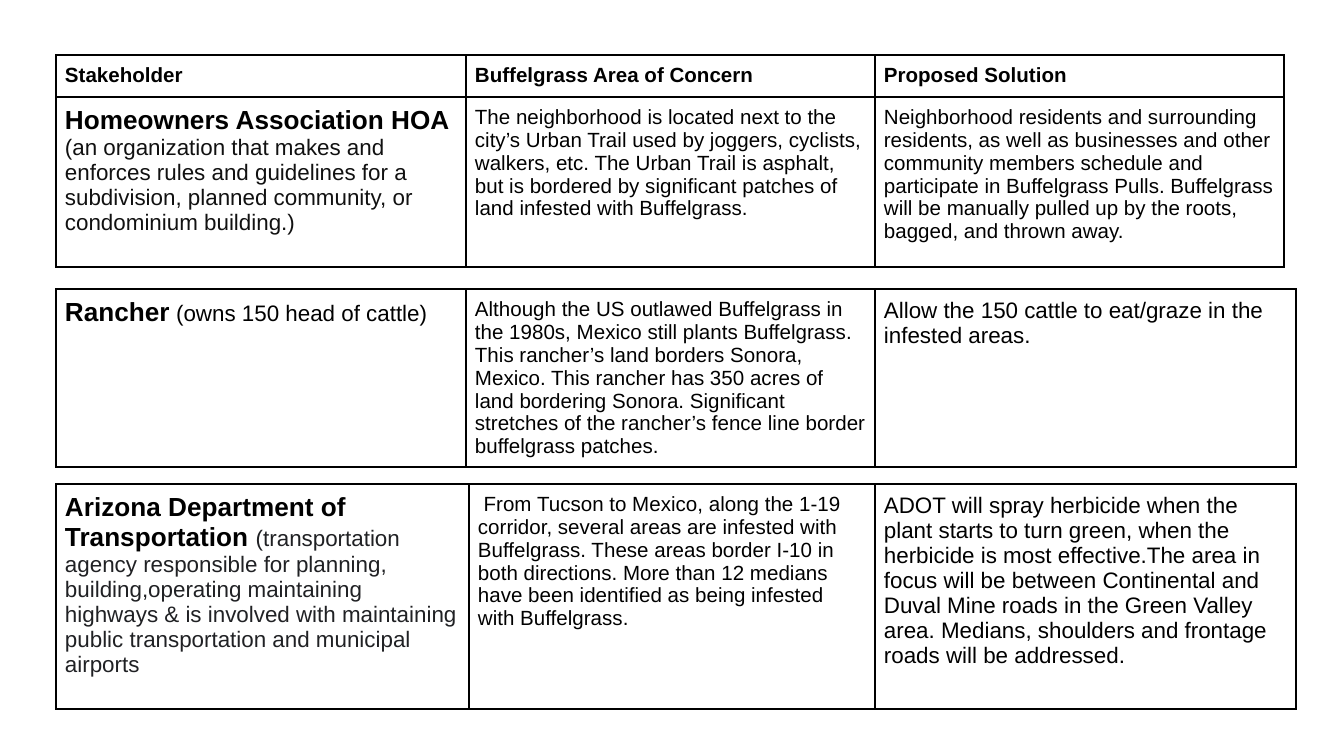
from lxml.etree import SubElement
from pptx import Presentation
from pptx.dml.color import RGBColor
from pptx.oxml.ns import qn
from pptx.util import Pt

PX = 914400 / 134.4
SLIDE_SIZE = (1344, 756)
LEFT, INSET = 56, 9
FONT = "Arial"
COLORS = {"black": "000000", "charcoal": "111111", "gray": "202124", "white": "FFFFFF"}

HEADING = {"size": 11, "bold": True}
NAME = {"size": 14, "bold": True}
DETAIL = {"size": 11}
LARGE = {"size": 12}

TABLES = [
    {
        "top": 55, "columns": [410, 409, 409], "heights": [42, 170],
        "rows": [
            [
                [("Stakeholder", HEADING)],
                [("Buffelgrass Area of Concern", HEADING)],
                [("Proposed Solution", HEADING)],
            ],
            [
                [
                    ("Homeowners Association HOA", NAME),
                    (" ", DETAIL),
                    ("(an organization that makes and enforces rules and guidelines for a "
                     "subdivision, planned community, or condominium building.)",
                     {"size": 12, "color": "charcoal"}),
                ],
                [("The neighborhood is located next to the city’s Urban Trail used by joggers, "
                  "cyclists, walkers, etc. The Urban Trail is asphalt, but is bordered by "
                  "significant patches of land infested with Buffelgrass.", DETAIL)],
                [("Neighborhood residents and surrounding residents, as well as businesses and "
                  "other community members schedule and participate in Buffelgrass Pulls. "
                  "Buffelgrass will be manually pulled up by the roots, bagged, and thrown away.",
                  DETAIL)],
            ],
        ],
    },
    {
        "top": 289, "columns": [410, 409, 421], "heights": [178],
        "rows": [[
            [
                ("Rancher", NAME),
                (" ", {"size": 12, "bold": True}),
                ("(owns 150 head of cattle)", LARGE),
            ],
            [("Although the US outlawed Buffelgrass in the 1980s, Mexico still plants "
              "Buffelgrass. This rancher’s land borders Sonora, Mexico. This rancher has 350 "
              "acres of land bordering Sonora. Significant stretches of the rancher’s fence "
              "line border buffelgrass patches.", DETAIL)],
            [("Allow the 150 cattle to eat/graze in the infested areas.", LARGE)],
        ]],
    },
    {
        "top": 484, "columns": [413, 406, 421], "heights": [225],
        "rows": [[
            [
                ("Arizona Department of Transportation ", NAME),
                ("(transportation agency responsible for planning, building,operating "
                 "maintaining highways & is involved with maintaining public transportation "
                 "and municipal airports", {"size": 12, "color": "gray"}),
            ],
            [(" From Tucson to Mexico, along the 1-19 corridor, several areas are infested with "
              "Buffelgrass. These areas border I-10 in both directions. More than 12 medians "
              "have been identified as being infested with Buffelgrass.", DETAIL)],
            [("ADOT will spray herbicide when the plant starts to turn green, when the "
              "herbicide is most effective.The area in focus will be between Continental and "
              "Duval Mine roads in the Green Valley area. Medians, shoulders and frontage "
              "roads will be addressed.", LARGE)],
        ]],
    },
]


def px(length):
    return round(length * PX)


def add_text(paragraph, text, size, bold=False, color="black"):
    run = paragraph.add_run()
    run.text = text
    run.font.name = FONT
    run.font.size = Pt(size)
    run.font.bold = bold
    run.font.color.rgb = RGBColor.from_string(COLORS[color])


def style_cell(cell):
    cell.margin_left = cell.margin_right = px(INSET)
    cell.margin_top = cell.margin_bottom = px(INSET)
    properties = cell._tc.get_or_add_tcPr()
    for side in ("a:lnL", "a:lnR", "a:lnT", "a:lnB"):
        border = SubElement(properties, qn(side), w=str(Pt(1)))
        fill = SubElement(border, qn("a:solidFill"))
        SubElement(fill, qn("a:srgbClr"), val=COLORS["black"])
    cell.fill.solid()
    cell.fill.fore_color.rgb = RGBColor.from_string(COLORS["white"])


def add_stakeholders(slide, top, columns, heights, rows):
    table = slide.shapes.add_table(
        len(rows), len(columns), px(LEFT), px(top), px(sum(columns)), px(sum(heights))
    ).table
    table.first_row = table.horz_banding = False
    for column, width in zip(table.columns, columns):
        column.width = px(width)
    for row, height, contents in zip(table.rows, heights, rows):
        row.height = px(height)
        for cell, passages in zip(row.cells, contents):
            style_cell(cell)
            for text, style in passages:
                add_text(cell.text_frame.paragraphs[0], text, **style)


def main():
    presentation = Presentation()
    presentation.slide_width, presentation.slide_height = map(px, SLIDE_SIZE)
    slide = presentation.slides.add_slide(presentation.slide_layouts[6])
    for stakeholders in TABLES:
        add_stakeholders(slide, **stakeholders)
    presentation.save("out.pptx")


if __name__ == "__main__":
    main()
